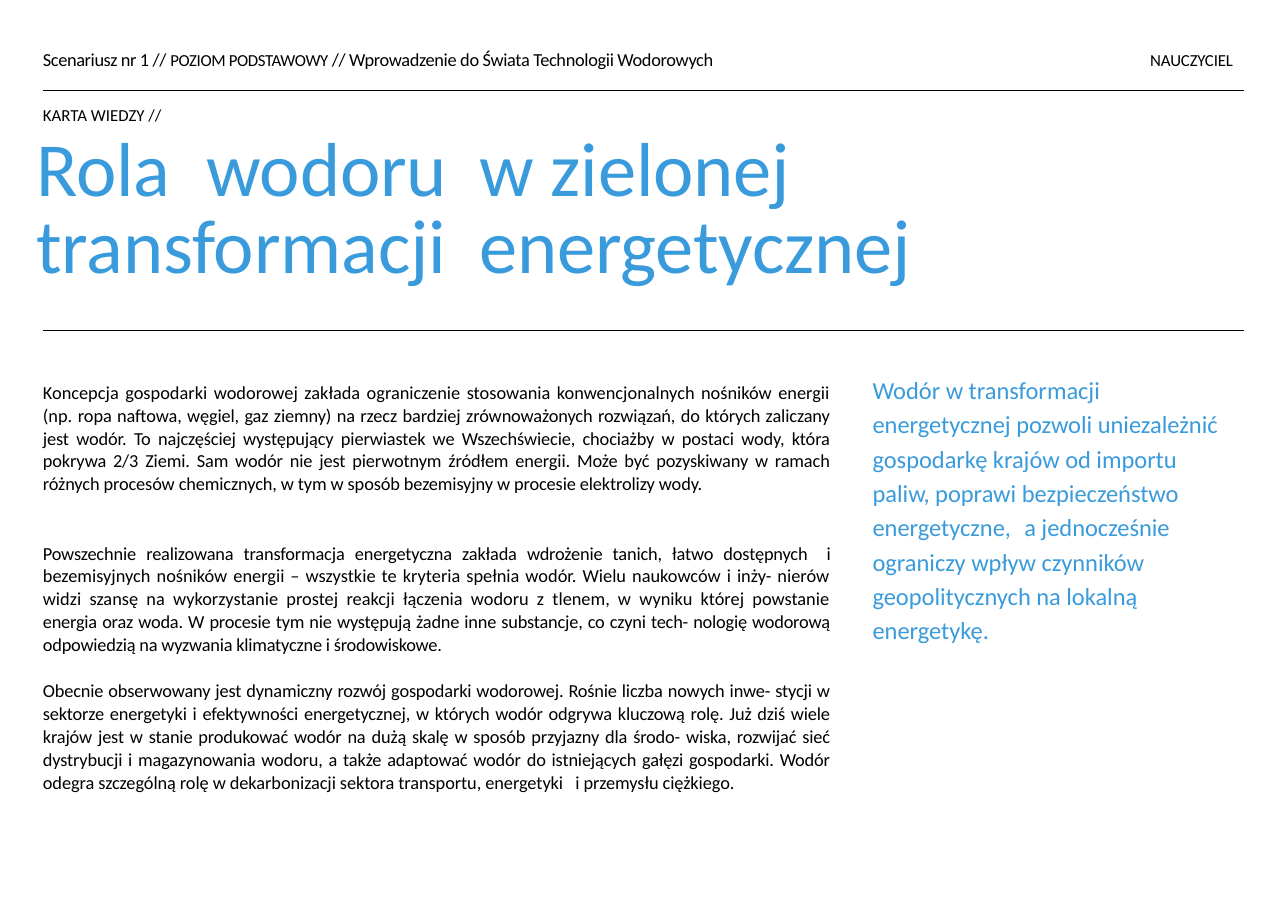
from dataclasses import dataclass

from lxml.etree import SubElement
from pptx import Presentation
from pptx.dml.color import RGBColor as RGB
from pptx.enum.shapes import MSO_CONNECTOR as CONN
from pptx.enum.text import MSO_ANCHOR as ANCHOR, MSO_AUTO_SIZE as FIT, PP_ALIGN as ALIGN
from pptx.oxml.ns import qn
from pptx.util import Pt

PX = 9144
WIDTH, HEIGHT = 1169, 827


@dataclass(frozen=True)
class Theme:
    """Colours, font and type sizes of the slide."""
    ink: RGB = RGB(0, 0, 0)
    accent: RGB = RGB(0x3A, 0x9B, 0xDC)
    font: str = "Calibri"
    label: int = 11
    body: int = 12
    aside: int = 16
    title: int = 50
    rule: float = 0.5


T = Theme()
WIDE = 500

LEVEL = [("Scenariusz nr 1 // ", T.body, -25), ("POZIOM PODSTAWOWY ", T.label, -25),
         ("// Wprowadzenie do Świata Technologii Wodorowych", T.body, -23)]
TITLE = "Rola\twodoru\tw\tzielonej transformacji\tenergetycznej"
TITLE_TABS = (154, 402, 423, 467)
BODY = [
    (344, 127, [
        ("Koncepcja gospodarki wodorowej zakłada ograniczenie stosowania "
         "konwencjonalnych nośników energii (np. ", T.body, 0),
        ("ropa naftowa, węgiel, gaz ziemny) na rzecz bardziej zrównoważonych "
         "rozwiązań, do których zaliczany jest wodór. To najczęściej występujący pierwiastek "
         "we Wszechświecie, chociażby w postaci wody, która pokrywa 2/3 Ziemi. Sam wodór nie "
         "jest pierwotnym źródłem energii. Może być pozyskiwany w ramach różnych procesów "
         "chemicznych, w tym w sposób bezemisyjny w procesie elektrolizy wody.", T.body, -8)]),
    (490, 106, [
        ("Powszechnie realizowana transformacja energetyczna zakłada wdrożenie tanich, łatwo "
         "dostępnych", T.body, -10),
        (" ", T.body, WIDE),
        ("i bezemisyjnych nośników energii – wszystkie te kryteria spełnia wodór. "
         "Wielu naukowców i inży- nierów widzi szansę na wykorzystanie prostej reakcji "
         "łączenia wodoru z tlenem, w wyniku której powstanie ", T.body, 0),
        ("energia oraz woda. W procesie "
         "tym nie występują żadne inne substancje, co czyni tech- nologię wodorową "
         "odpowiedzią na wyzwania klimatyczne i środowiskowe.", T.body, -14)]),
    (615, 127, [
        ("Obecnie obserwowany jest dynamiczny rozwój gospodarki wodorowej. Rośnie liczba "
         "nowych inwe- stycji w sektorze energetyki i efektywności energetycznej, w których "
         "wodór odgrywa kluczową rolę. Już dziś wiele krajów jest w stanie produkować wodór "
         "na dużą skalę w sposób przyjazny dla środo- wiska, rozwijać sieć dystrybucji "
         "i magazynowania wodoru, a także adaptować wodór do istniejących gałęzi gospodarki. "
         "Wodór ", T.body, -12),
        ("odegra szczególną rolę w dekarbonizacji sektora transportu, energetyki",
         T.body, -7),
        (" ", T.body, WIDE),
        ("i przemysłu ciężkiego.", T.body, -7)]),
]
ASIDE = [
    ("Wodór w transformacji energetycznej pozwoli uniezależnić gospodarkę krajów od "
     "importu paliw, poprawi bezpieczeństwo energetyczne,", T.aside, 0),
    (" ", T.aside, WIDE),
    ("a jednocześnie ograniczy wpływ czynników geopolitycznych na lokalną energetykę.",
     T.aside, 0)]


def fill_text(sp, runs, color=T.ink, spacing=1.0, before=1, align=ALIGN.LEFT):
    """Write one paragraph of (text, size, tracking) runs and return it."""
    tf = sp.text_frame
    tf.word_wrap, tf.auto_size, tf.vertical_anchor = True, FIT.NONE, ANCHOR.TOP
    tf.margin_left = tf.margin_top = PX
    tf.margin_right = tf.margin_bottom = 0
    p = tf.paragraphs[0]
    p.alignment, p.line_spacing, p.space_before = align, spacing, Pt(before)
    p.font.name, p.font.size, p.font.color.rgb = T.font, Pt(runs[0][1]), color
    for text, size, tracking in runs:
        r = p.add_run()
        r.text = text
        if size != runs[0][1]:
            r.font.size = Pt(size)
        r.font._element.set("spc", str(tracking))
    return p


def add_text(slide, box, runs, **style):
    """Add a text box at a px box."""
    sp = slide.shapes.add_textbox(*(v * PX for v in box))
    fill_text(sp, runs, **style)


def add_rule(slide, x, y, width):
    """Add a thin horizontal line."""
    line = slide.shapes.add_connector(CONN.STRAIGHT, x * PX, y * PX, (x + width) * PX, y * PX)
    line.line.color.rgb, line.line.width = T.ink, Pt(T.rule)
    SubElement(line._element.spPr, qn("a:effectLst"))


def add_header(slide, x, y, width):
    """Place the scenario line, the audience label and the rule below them."""
    add_text(slide, (x - 1, y, 664, 23), LEVEL)
    add_text(slide, (x + 1004, y + 1, 88, 21), [("NAUCZYCIEL", T.label, -10)])
    add_rule(slide, x, y + 39, width)


def add_heading(slide, x, y, width):
    """Place the card label, the title and the closing rule."""
    add_text(slide, (x - 1, y, 200, 20), [("KARTA WIEDZY //", T.label, 0)], spacing=Pt(10.8))
    title = slide.shapes.title
    title.left, title.top, title.width, title.height = (
        v * PX for v in (x - 7, y + 25, 856, 140))
    p = fill_text(title, [(TITLE, T.title, -10)], T.accent, Pt(50), 0)
    tabs = SubElement(p._p.get_or_add_pPr(), qn("a:tabLst"))
    p.font._element.addprevious(tabs)
    for pos in TITLE_TABS:
        SubElement(tabs, qn("a:tab"), pos=str(pos * PX), algn="l")
    add_rule(slide, x, y + 203, width)


def add_body(slide, x, width):
    """Place the justified paragraphs in one column."""
    for y, height, runs in BODY:
        add_text(slide, (x, y, width, height), runs,
                 spacing=1.04, before=0.4, align=ALIGN.JUSTIFY)


def add_aside(slide, box):
    """Place the coloured summary beside the body."""
    add_text(slide, box, ASIDE, color=T.accent, spacing=1.17)


def main():
    """Build and save the slide."""
    prs = Presentation()
    prs.slide_width, prs.slide_height = WIDTH * PX, HEIGHT * PX
    slide = prs.slides.add_slide(prs.slide_layouts[5])
    add_header(slide, 39, 43, 1090)
    add_heading(slide, 39, 97, 1090)
    add_body(slide, 38, 716)
    add_aside(slide, (791, 335, 321, 253))
    prs.save("out.pptx")


if __name__ == "__main__":
    main()
